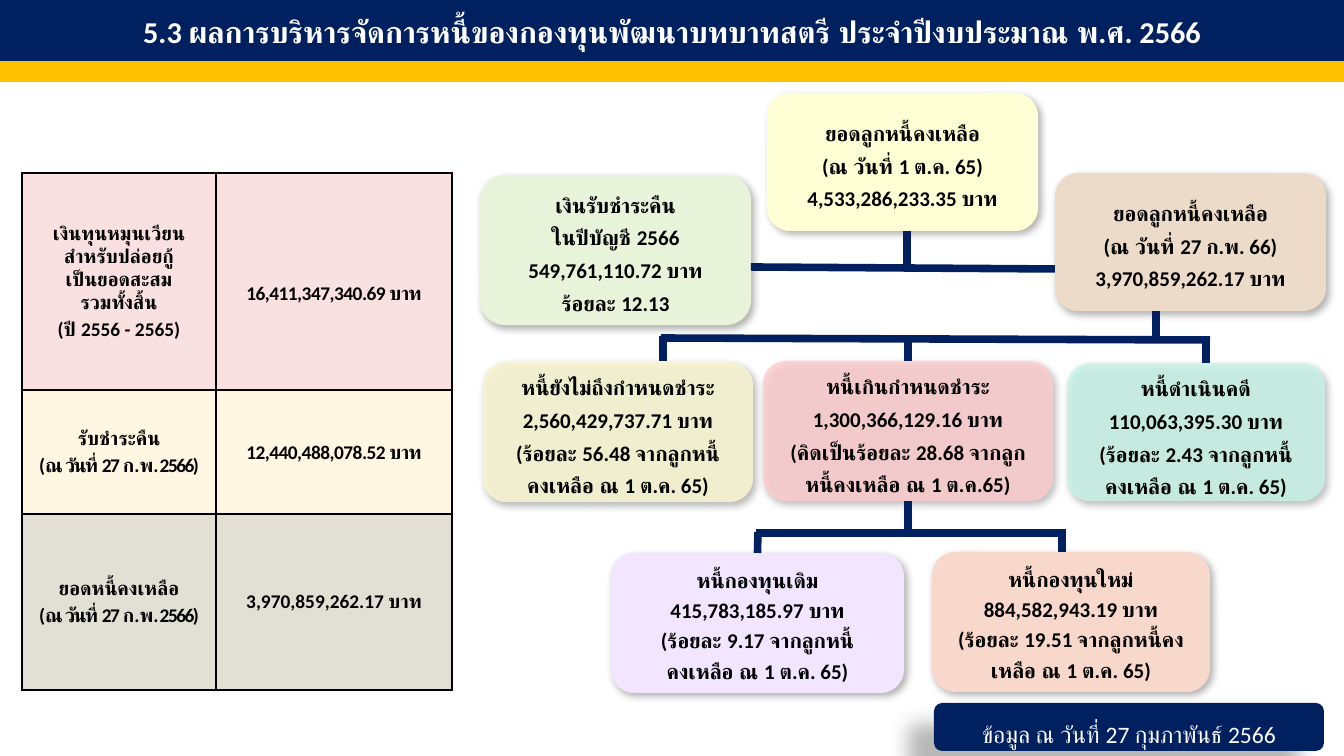
from pptx import Presentation
from pptx.dml.color import RGBColor
from pptx.enum.shapes import MSO_CONNECTOR, MSO_SHAPE
from pptx.enum.text import MSO_ANCHOR, MSO_AUTO_SIZE, PP_ALIGN
from pptx.oxml import parse_xml
from pptx.oxml.ns import nsdecls, qn
from pptx.oxml.xmlchemy import OxmlElement
from pptx.util import Pt

STRAIGHT = MSO_CONNECTOR.STRAIGHT
RECT, ROUND = MSO_SHAPE.RECTANGLE, MSO_SHAPE.ROUNDED_RECTANGLE
TOP, MIDDLE = MSO_ANCHOR.TOP, MSO_ANCHOR.MIDDLE
CENTER = PP_ALIGN.CENTER
PX = 914400 / 121
COLORS = {
    "navy": "002060", "gold": "FFC000", "white": "FFFFFF", "black": "000000",
    "yellow": "FFFFD5", "green": "E8F3DA", "tan": "EDDBC9",
    "cream": "F6F4D2", "pink": "FFCDCE", "mint": "C8F5E8",
    "lilac": "F2E5FF", "peach": "F8D8CA",
    "rose": "F7DAD9", "ivory": "FFF5DA", "stone": "D6D2C4",
}


def paint(fill, properties, color, opacity=100):
    fill.solid()
    fill.fore_color.rgb = RGBColor.from_string(COLORS[color])
    if opacity < 100:
        alpha = OxmlElement("a:alpha")
        alpha.set("val", str(opacity * 1000))
        properties.find(qn("a:solidFill") + "/" + qn("a:srgbClr")).append(alpha)


def write(frame, lines, size, color="black", bold=True, spacing=1.0, spacings=()):
    frame.text = "\n".join(lines)
    frame.word_wrap = True
    for number, para in enumerate(frame.paragraphs):
        para.alignment = CENTER
        para.line_spacing = spacing
        for span in para.runs:
            span.font.size = Pt(size)
            span.font.name = "Calibri"
            span.font.bold = bold
            span.font.color.rgb = RGBColor.from_string(COLORS[color])
            if spacings:
                span.font._element.set("spc", str(spacings[number]))


deck = Presentation()
deck.slide_width, deck.slide_height = round(1344 * PX), round(756 * PX)
page = deck.slides.add_slide(deck.slide_layouts[5])

# Title bar and gold stripe
title = page.shapes.title
title.left, title.top = 0, 0
title.width, title.height = round(1344 * PX), round(62 * PX)
paint(title.fill, title._element.spPr, "navy")
title.line.color.rgb = RGBColor.from_string(COLORS["navy"])
title.line.width = Pt(1)
title.text_frame.auto_size = MSO_AUTO_SIZE.NONE
title.text_frame.vertical_anchor = MIDDLE
write(title.text_frame,
      ["5.3 ผลการบริหารจัดการหนี้ของกองทุนพัฒนาบทบาทสตรี ประจำปีงบประมาณ พ.ศ. 2566"],
      18, "white")

stripe = page.shapes.add_shape(RECT, 0, round(62 * PX), round(1344 * PX), round(19 * PX))
stripe.shadow.inherit = False
paint(stripe.fill, stripe._element.spPr, "gold")
stripe.line.color.rgb = RGBColor.from_string(COLORS["gold"])
stripe.line.width = Pt(1)

# Summary table: label, label spacings, amount, amount spacing, colour, opacity, height
table_rows = [
    (["เงินทุนหมุนเวียน", "สำหรับปล่อยกู้", "เป็นยอดสะสม", "รวมทั้งสิ้น", "(ปี 2556 - 2565)"],
     (0, 0, 0, 0, 0), "16,411,347,340.69 บาท", -30, "rose", 80, 217),
    (["รับชำระคืน", "(ณ วันที่ 27 ก.พ. 2566)"],
     (0, -90), "12,440,488,078.52 บาท", -30, "ivory", 80, 124),
    (["ยอดหนี้คงเหลือ", "(ณ วันที่ 27 ก.พ. 2566)"],
     (0, -90), "3,970,859,262.17 บาท", 0, "stone", 70, 176),
]
table = page.shapes.add_table(3, 2, round(22 * PX), round(173 * PX),
                              round(430 * PX), round(517 * PX)).table
table.first_row = table.horz_banding = False
table.columns[0].width, table.columns[1].width = round(194 * PX), round(236 * PX)
for row, (label, spacings, amount, amount_spacing, color, opacity, height) in enumerate(table_rows):
    table.rows[row].height = round(height * PX)
    label_cell, amount_cell = table.cell(row, 0), table.cell(row, 1)
    write(label_cell.text_frame, label, 11.5, spacing=1.2, spacings=spacings)
    write(amount_cell.text_frame, [amount], 11.5, spacings=[amount_spacing])
    amount_cell.margin_left = amount_cell.margin_right = round(PX)
    amount_cell.margin_top, amount_cell.margin_bottom = round(PX), 0
    for cell in (label_cell, amount_cell):
        cell.vertical_anchor = MIDDLE
        properties = cell._tc.get_or_add_tcPr()
        for side in ("lnL", "lnR", "lnT", "lnB"):
            properties.append(parse_xml(
                f'<a:{side} {nsdecls("a")} w="12700"><a:solidFill>'
                f'<a:srgbClr val="{COLORS["black"]}"/></a:solidFill></a:{side}>'))
        paint(cell.fill, properties, color, opacity)
table.cell(0, 1).margin_top = round(24 * PX)

# Debt boxes: position, colour, opacity, anchor, line spacing, lines
debt_boxes = {
    "opening": (767, 93, 271, 138, "yellow", 100, MIDDLE, 1.3,
                ["ยอดลูกหนี้คงเหลือ", "(ณ วันที่ 1 ต.ค. 65)", "4,533,286,233.35 บาท"]),
    "repaid": (480, 175, 271, 150, "green", 100, MIDDLE, 1.3,
               ["เงินรับชำระคืน", "ในปีบัญชี 2566", "549,761,110.72 บาท", "ร้อยละ 12.13"]),
    "remaining": (1055, 173, 271, 138, "tan", 100, MIDDLE, 1.3,
                  ["ยอดลูกหนี้คงเหลือ", "(ณ วันที่ 27 ก.พ. 66)", "3,970,859,262.17 บาท"]),
    "not due": (483, 362, 270, 140, "cream", 90, TOP, 1.3,
                ["หนี้ยังไม่ถึงกำหนดชำระ", "2,560,429,737.71 บาท",
                 "(ร้อยละ 56.48 จากลูกหนี้", "คงเหลือ ณ 1 ต.ค. 65)"]),
    "overdue": (763, 361, 290, 140, "pink", 80, TOP, 1.3,
                ["หนี้เกินกำหนดชำระ", "1,300,366,129.16 บาท",
                 "(คิดเป็นร้อยละ 28.68 จากลูกหนี้คงเหลือ ณ 1 ต.ค.65)"]),
    "lawsuit": (1067, 363, 258, 138, "mint", 80, TOP, 1.3,
                ["หนี้ดำเนินคดี", "110,063,395.30 บาท",
                 "(ร้อยละ 2.43 จากลูกหนี้", "คงเหลือ ณ 1 ต.ค. 65)"]),
    "old fund": (611, 553, 293, 140, "lilac", 100, MIDDLE, 1.2,
                 ["หนี้กองทุนเดิม", "415,783,185.97 บาท",
                  "(ร้อยละ 9.17 จากลูกหนี้", "คงเหลือ ณ 1 ต.ค. 65)"]),
    "new fund": (932, 552, 278, 140, "peach", 100, MIDDLE, 1.2,
                 ["หนี้กองทุนใหม่", "884,582,943.19 บาท",
                  "(ร้อยละ 19.51 จากลูกหนี้คงเหลือ ณ 1 ต.ค. 65)"]),
    "date": (934, 703, 390, 48, "navy", 100, MIDDLE, 1.5,
             ["ข้อมูล ณ วันที่ 27 กุมภาพันธ์ 2566"]),
}
boxes = {}
for name, (left, top, width, height, color, opacity, anchor, spacing, lines) in debt_boxes.items():
    box = page.shapes.add_shape(ROUND, *[round(v * PX) for v in (left, top, width, height)])
    boxes[name] = box
    paint(box.fill, box._element.spPr, color, opacity)
    box.line.fill.background()
    box.shadow.inherit = False
    shade, blur, distance, angle = (28, 11.8, 19.7, 141) if name == "date" else (30, 4.5, 2.6, 53)
    box._element.spPr.find(qn("a:effectLst")).append(parse_xml(
        f'<a:outerShdw {nsdecls("a")} blurRad="{Pt(blur)}" dist="{Pt(distance)}" '
        f'dir="{angle * 60000}" algn="ctr" rotWithShape="0"><a:srgbClr val="{COLORS["black"]}">'
        f'<a:alpha val="{shade * 1000}"/></a:srgbClr></a:outerShdw>'))
    box.text_frame.vertical_anchor = anchor
    if name == "date":
        write(box.text_frame, lines, 14, "white", False, spacing)
    else:
        write(box.text_frame, lines, 12.5, spacing=spacing)
    if anchor == TOP:
        box.text_frame.paragraphs[0].line_spacing = 1.0

# Tree lines: start, end, joined start and joined end (box, side)
tree_lines = [
    (907, 231, 907, 270, None, None),
    (751, 267, 1055, 269, None, None),
    (1156, 311, 1156, 340, None, None),
    (661, 338, 1210, 340, None, None),
    (663, 336, 663, 361, None, None),
    (908, 340, 908, 361, None, ("overdue", 0)),
    (1206, 338, 1206, 363, None, None),
    (908, 501, 908, 533, ("overdue", 2), None),
    (756, 533, 1066, 533, None, None),
    (758, 532, 758, 553, None, ("old fund", 0)),
    (1062, 532, 1062, 552, None, None),
]
for x1, y1, x2, y2, start, end in tree_lines:
    line = page.shapes.add_connector(STRAIGHT, *[round(v * PX) for v in (x1, y1, x2, y2)])
    line.line.color.rgb = RGBColor.from_string(COLORS["navy"])
    line.line.width = Pt(4.5)
    line._element.spPr.append(OxmlElement("a:effectLst"))
    if start:
        line.begin_connect(boxes[start[0]], start[1])
    if end:
        line.end_connect(boxes[end[0]], end[1])

deck.save("out.pptx")
